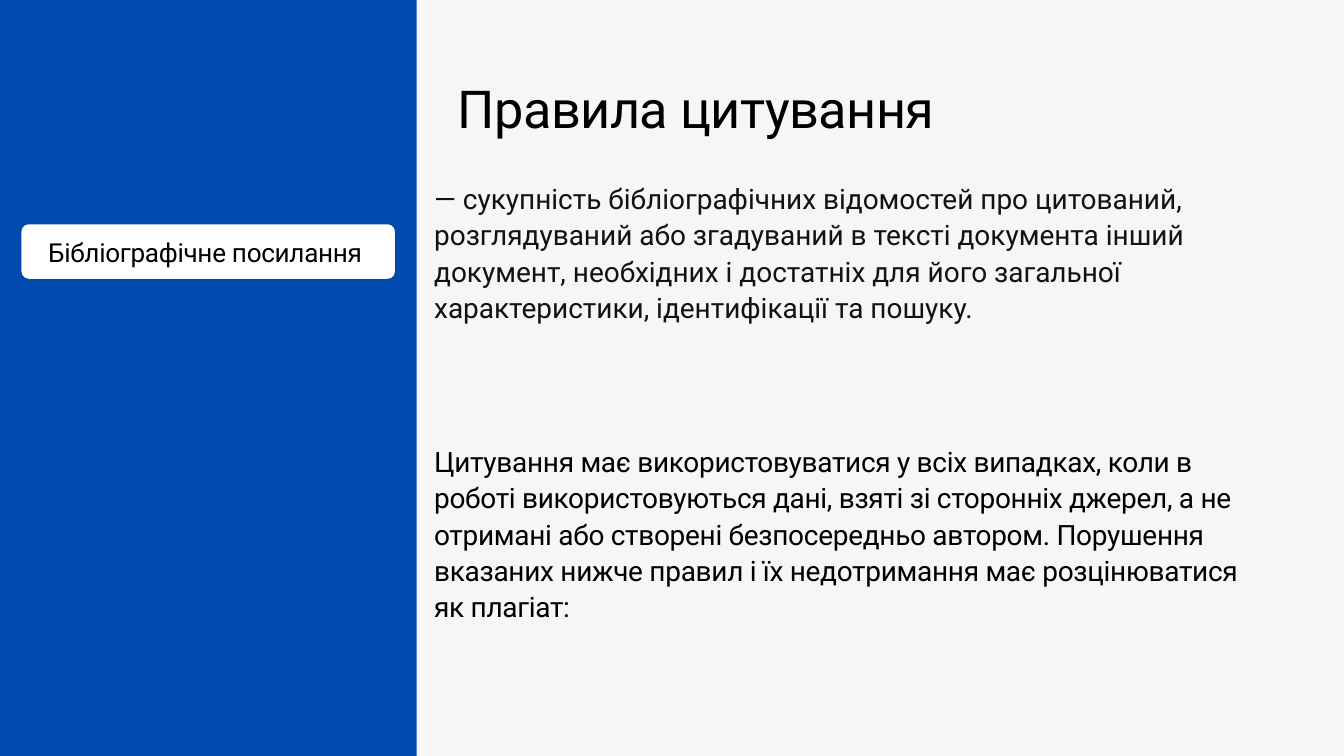
from dataclasses import dataclass

from pptx import Presentation
from pptx.dml.color import RGBColor
from pptx.enum import shapes, text
from pptx.slide import Slide
from pptx.util import Cm, Pt


@dataclass(frozen=True)
class Theme:
    background: str = "F6F6F6"
    panel: str = "004AAD"
    badge: str = "FFFFFF"
    ink: str = "000000"
    soft_ink: str = "14110F"
    font: str = "Roboto"
    title_size: float = 56
    body_size: float = 30
    label_size: float = 28
    line_factor: float = 1.3


@dataclass(frozen=True)
class Box:
    left: float
    top: float
    width: float
    height: float

    def lengths(self) -> tuple[Cm, Cm, Cm, Cm]:
        return Cm(self.left), Cm(self.top), Cm(self.width), Cm(self.height)


@dataclass(frozen=True)
class Block:
    wording: str
    box: Box
    size: float
    color: str
    spacing: float = 0
    centered: bool = False


THEME = Theme()
SLIDE_WIDTH, SLIDE_HEIGHT = 50.8, 28.58
TEXT_LEFT = 16.41

PANEL = Box(0, 0, 15.75, SLIDE_HEIGHT)
BADGE = Box(0.81, 8.48, 14.12, 2.06)
BADGE_RADIUS = 0.28

BLOCKS = [
    Block(
        "— сукупність бібліографічних відомостей про цитований, "
        "розглядуваний або згадуваний в тексті документа інший документ, "
        "необхідних і достатніх для його загальної характеристики, "
        "ідентифікації та пошуку.",
        Box(TEXT_LEFT, 6.76, 28.96, 5.44), THEME.body_size, THEME.soft_ink,
    ),
    Block(
        "Цитування має використовуватися у всіх випадках, коли в роботі "
        "використовуються дані, взяті зі сторонніх джерел, а не отримані "
        "або створені безпосередньо автором. Порушення вказаних нижче "
        "правил і їх недотримання має розцінюватися як плагіат:",
        Box(TEXT_LEFT, 16.69, 31.55, 6.78), THEME.body_size, THEME.ink, -0.3,
    ),
    Block(
        "Правила цитування",
        Box(TEXT_LEFT, 2.67, 19.79, 2.59), THEME.title_size, THEME.ink, -0.6, True,
    ),
    Block(
        "Бібліографічне посилання",
        Box(1.5, 8.84, 12.5, 1.27), THEME.label_size, THEME.ink, -0.3, True,
    ),
]


def set_attributes(target: object, values: dict[str, object]) -> None:
    for name, value in values.items():
        setattr(target, name, value)


def draw_shape(slide: Slide, box: Box, color: str, radius: float = 0) -> None:
    kinds = shapes.MSO_SHAPE
    kind = kinds.ROUNDED_RECTANGLE if radius else kinds.RECTANGLE
    shape = slide.shapes.add_shape(kind, *box.lengths())
    if radius:
        shape.adjustments[0] = radius / min(box.width, box.height)
    shape.shadow.inherit = False
    shape.fill.solid()
    shape.fill.fore_color.rgb = RGBColor.from_string(color)
    shape.line.fill.background()


def draw_text(slide: Slide, block: Block) -> None:
    frame = slide.shapes.add_textbox(*block.box.lengths()).text_frame
    set_attributes(frame, {
        "word_wrap": True,
        "auto_size": text.MSO_AUTO_SIZE.SHAPE_TO_FIT_TEXT,
        "margin_left": 0, "margin_top": 0,
        "margin_right": 0, "margin_bottom": 0,
    })
    paragraph = frame.paragraphs[0]
    alignment = text.PP_ALIGN.CENTER if block.centered else text.PP_ALIGN.LEFT
    set_attributes(paragraph, {
        "alignment": alignment,
        "line_spacing": Pt(block.size * THEME.line_factor),
    })
    run = paragraph.add_run()
    run.text = block.wording
    set_attributes(run.font, {"name": THEME.font, "size": Pt(block.size)})
    run.font.color.rgb = RGBColor.from_string(block.color)
    # Letter spacing is stored in hundredths of a point
    if block.spacing:
        run._r.get_or_add_rPr().set("spc", str(round(block.spacing * 100)))


def main() -> None:
    presentation = Presentation()
    set_attributes(presentation, {
        "slide_width": Cm(SLIDE_WIDTH), "slide_height": Cm(SLIDE_HEIGHT),
    })
    slide = presentation.slides.add_slide(presentation.slide_layouts[6])

    # Background, side panel and badge
    slide.background.fill.solid()
    slide.background.fill.fore_color.rgb = RGBColor.from_string(THEME.background)
    draw_shape(slide, PANEL, THEME.panel)
    draw_shape(slide, BADGE, THEME.badge, BADGE_RADIUS)

    # Title, definition, rule and badge label
    for block in BLOCKS:
        draw_text(slide, block)

    presentation.save("out.pptx")


if __name__ == "__main__":
    main()
